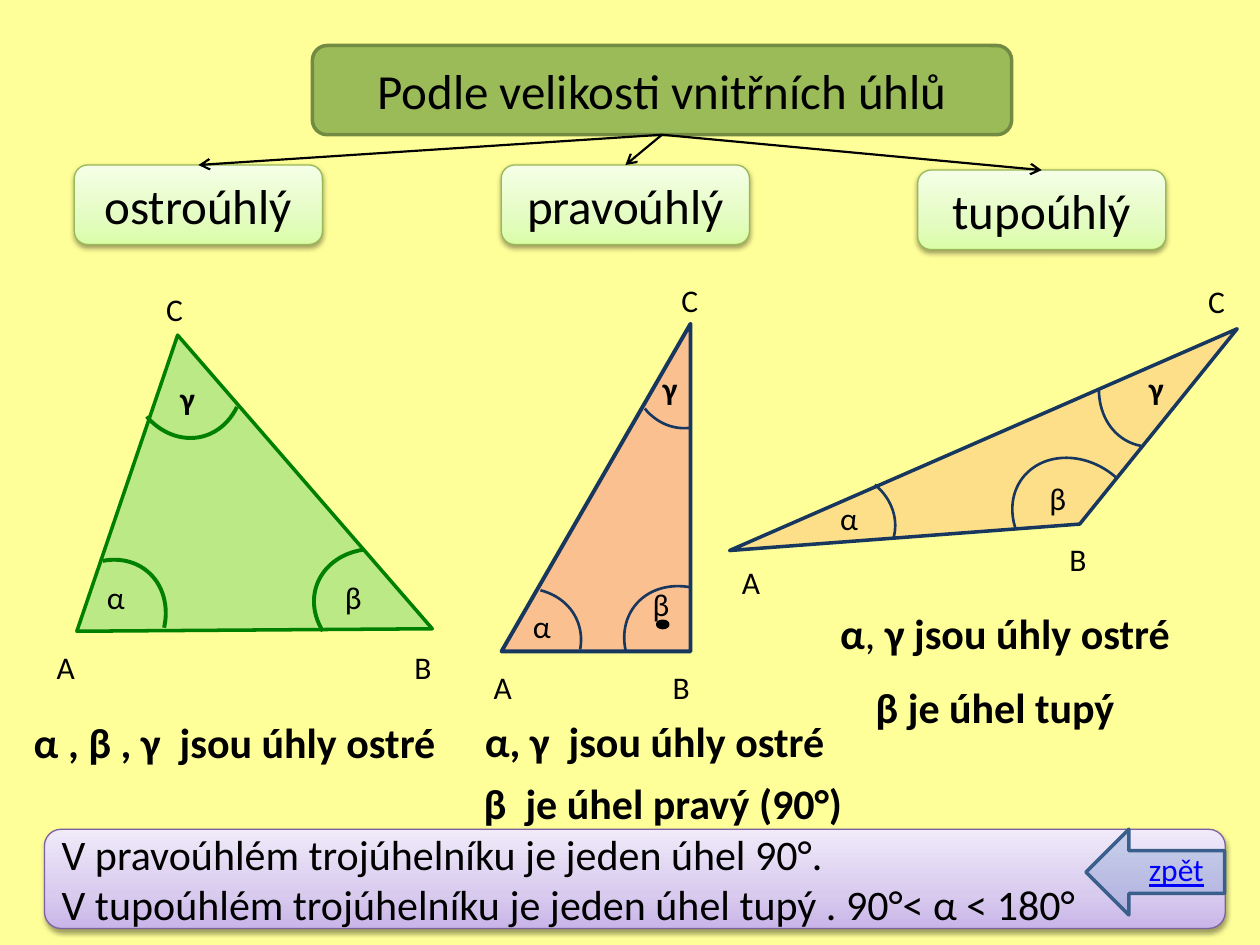
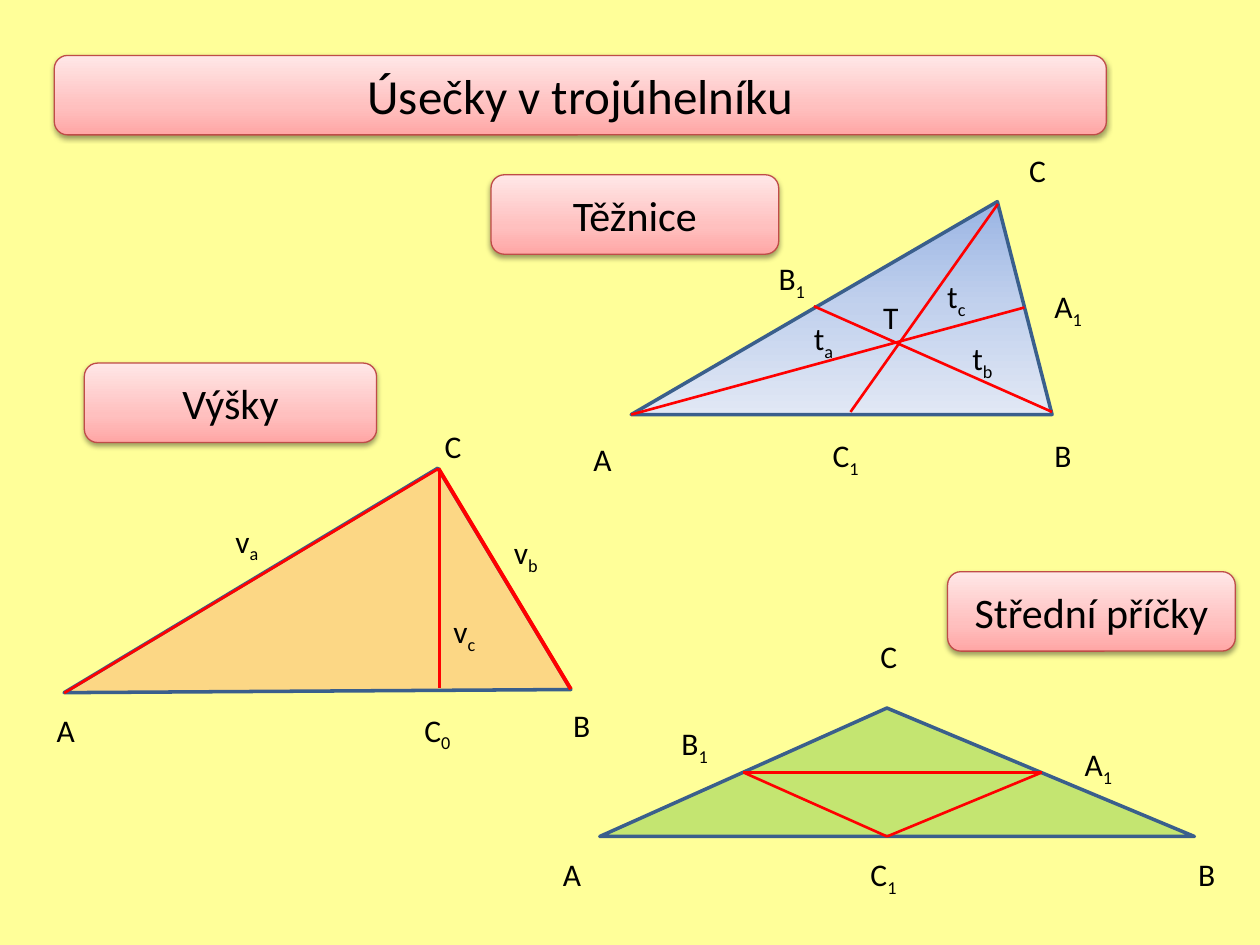
import pptx
import pptx.oxml
import pptx.oxml.ns
import pptx.util
import pptx.dml.color
import pptx.enum.shapes
import pptx.enum.text

Pt = pptx.util.Pt
RGBColor = pptx.dml.color.RGBColor
SHAPE = pptx.enum.shapes.MSO_SHAPE
STRAIGHT = pptx.enum.shapes.MSO_CONNECTOR.STRAIGHT
CENTER = pptx.enum.text.PP_ALIGN.CENTER
LEFT = pptx.enum.text.PP_ALIGN.LEFT
DRAWING = pptx.oxml.ns.nsdecls("a")

PAPER = RGBColor(0xFF, 0xFF, 0x99)
BLACK = RGBColor(0, 0, 0)
RED = RGBColor(0xFF, 0, 0)
LINK_BLUE = RGBColor(0, 0, 0xFF)
OLIVE = RGBColor(0x9B, 0xBB, 0x59)
OLIVE_EDGE = RGBColor(0x73, 0x8A, 0x42)
LIME_EDGE = RGBColor(0x98, 0xB9, 0x55)
VIOLET_EDGE = RGBColor(0x7D, 0x60, 0xA0)
ROSE_EDGE = RGBColor(0xBF, 0x4C, 0x48)
LEAF = RGBColor(0, 0xB0, 0x50)
DARK_GREEN = RGBColor(0, 0x80, 0)
CORAL = RGBColor(0xF9, 0x8C, 0x61)
PEACH = RGBColor(0xFA, 0xC0, 0x90)
NAVY = RGBColor(0x17, 0x37, 0x5E)
BLUE = RGBColor(0x4F, 0x81, 0xBD)
STEEL = RGBColor(0x3A, 0x5F, 0x8C)
GRASS = RGBColor(0x92, 0xD0, 0x50)

# Gradients: angle in degrees, then (position in percent, colour)
LIME = (270, [(0, RGBColor(0xDA, 0xFD, 0xA7)), (35, RGBColor(0xE4, 0xFC, 0xC2)),
              (100, RGBColor(0xF5, 0xFF, 0xE7))])
VIOLET = (270, [(0, RGBColor(0xC9, 0xB5, 0xE8)), (35, RGBColor(0xD8, 0xCB, 0xEE)),
                (100, RGBColor(0xF0, 0xEA, 0xF9))])
ROSE = (270, [(0, RGBColor(0xFF, 0xA6, 0xA5)), (35, RGBColor(0xFF, 0xC0, 0xBF)),
              (100, RGBColor(0xFF, 0xE7, 0xE7))])
SKY = (90, [(0, RGBColor(0x9A, 0xB5, 0xE4)), (50, RGBColor(0xC2, 0xD1, 0xED)),
            (100, RGBColor(0xE1, 0xE8, 0xF5))])


def paint(shape, fill, edge, width, opacity=100, shadow=False):
    """Fill with a colour, a gradient or nothing, and set outline and shadow."""
    properties = shape._element.spPr
    shape.fill.background()
    if isinstance(fill, RGBColor):
        shape.fill.solid()
        shape.fill.fore_color.rgb = fill
        if opacity < 100:
            color = properties.find(".//" + pptx.oxml.ns.qn("a:srgbClr"))
            color.append(pptx.oxml.parse_xml(f'<a:alpha {DRAWING} val="{opacity * 1000}"/>'))
    elif fill:
        angle, stops = fill
        marks = "".join(f'<a:gs pos="{at * 1000}"><a:srgbClr val="{color}"/></a:gs>'
                        for at, color in stops)
        properties.replace(
            properties.find(pptx.oxml.ns.qn("a:noFill")),
            pptx.oxml.parse_xml(f'<a:gradFill {DRAWING} rotWithShape="1"><a:gsLst>{marks}</a:gsLst>'
                                f'<a:lin ang="{angle * 60000}" scaled="0"/></a:gradFill>'))
    shape.line.color.rgb = edge
    shape.line.width = Pt(width)
    shape.shadow.inherit = False
    if shadow:
        properties.find(pptx.oxml.ns.qn("a:effectLst")).append(pptx.oxml.parse_xml(
            f'<a:outerShdw {DRAWING} blurRad="40000" dist="20000" dir="5400000" rotWithShape="0">'
            '<a:srgbClr val="000000"><a:alpha val="38000"/></a:srgbClr></a:outerShdw>'))


def write(shape, text, size, bold=False, align=LEFT, color=BLACK):
    """Write lines of text; what follows an underscore is a subscript."""
    frame = shape.text_frame
    frame.word_wrap = True
    for number, line in enumerate(text.split("\n")):
        para = frame.add_paragraph() if number else frame.paragraphs[0]
        para.alignment = align
        para.font.name = "Calibri"
        para.font.size = Pt(size)
        para.font.bold = bold
        para.font.color.rgb = color
        base, _, subscript = line.partition("_")
        para.add_run().text = base
        if subscript:
            span = para.add_run()
            span.text = subscript
            span._r.get_or_add_rPr().set("baseline", "-25000")


deck = pptx.Presentation()
deck.slide_width, deck.slide_height = Pt(720), Pt(540)
angles_page, segments_page = pages = [deck.slides.add_slide(deck.slide_layouts[6]) for _ in range(2)]
for page in pages:
    page.background.fill.solid()
    page.background.fill.fore_color.rgb = PAPER

# Preset triangles: page, kind, frame, rotation, apex, fill, opacity, edge, width
for page, kind, frame, rotation, apex, fill, opacity, edge, width in [
    (angles_page, SHAPE.RIGHT_TRIANGLE, (247, 224.6, 187.2, 108), 270, None, PEACH, 100, NAVY, 2.25),
    (segments_page, SHAPE.ISOSCELES_TRIANGLE, (360.7, 115.2, 240.5, 121.7), 0, 0.87, SKY, 100, STEEL, 2),
    (segments_page, SHAPE.RIGHT_TRIANGLE, (56.9, 321.1, 249.1, 147.6), 149, None, CORAL, 34, STEEL, 2),
    (segments_page, SHAPE.ISOSCELES_TRIANGLE, (342.7, 404.6, 339.8, 73.4), 0, 0.483, GRASS, 54, STEEL, 2),
]:
    triangle = page.shapes.add_shape(kind, *map(Pt, frame))
    triangle.rotation = rotation
    if apex:
        triangle.adjustments[0] = apex
    paint(triangle, fill, edge, width, opacity)

# Acute and obtuse triangles drawn by their corners
for corners, fill, edge in [
    ([(101.5, 191.5), (43.9, 360.7), (247, 359.3)], LEAF, DARK_GREEN),
    ([(617, 299.5), (707, 187.9), (416.9, 314.6)], CORAL, NAVY),
]:
    points = [(Pt(x), Pt(y)) for x, y in corners]
    builder = angles_page.shapes.build_freeform(*points[0])
    builder.add_line_segments(points[1:], close=True)
    paint(builder.convert_to_shape(), fill, edge, 2, 27)

# Angle arcs: left, top, rotation, start, end, edge, width
for left, top, rotation, start, end, edge, width in [
    (26.6, 317.5, 39.6, 137.64, 194.54, DARK_GREEN, 2.25),
    (73.4, 172.8, 166.1, 137.64, 194.54, DARK_GREEN, 2.25),
    (185, 308.2, 288.4, 137.64, 194.54, DARK_GREEN, 2.25),
    (261.4, 331.2, 64.7, 137.64, 178.17, NAVY, 1.5),
    (360.7, 331.2, 307.6, 137.64, 194.54, NAVY, 1.5),
    (360, 167, 188.5, 155.98, 181.76, NAVY, 1.5),
    (439.9, 261.4, 90, 137.64, 167.85, NAVY, 1.5),
    (582.5, 257.8, 307.1, 134.98, 3.28, NAVY, 1.5),
    (629.3, 178.6, 206.5, 155.03, 194.54, NAVY, 1.5),
]:
    arc = angles_page.shapes.add_shape(SHAPE.ARC, Pt(left), Pt(top), Pt(65.5), Pt(77.8))
    arc.rotation = rotation
    arc.adjustments[0], arc.adjustments[1] = start, end
    paint(arc, None, edge, width)

# Rounded cards; those of the first page are kept for the arrows
cards = []
for page, text, frame, size, align, fill, edge in [
    (angles_page, "Podle velikosti vnitřních úhlů", (178.5, 26, 399.6, 51), 28, CENTER, OLIVE, OLIVE_EDGE),
    (angles_page, "ostroúhlý", (42.5, 94.3, 141.8, 45.4), 28, CENTER, LIME, LIME_EDGE),
    (angles_page, "pravoúhlý", (286.5, 94.3, 141.8, 45.4), 28, CENTER, LIME, LIME_EDGE),
    (angles_page, "tupoúhlý", (524.4, 97.2, 141.8, 45.4), 28, CENTER, LIME, LIME_EDGE),
    (angles_page, "V pravoúhlém trojúhelníku je jeden úhel 90°.\n"
     "V tupoúhlém trojúhelníku je jeden úhel tupý . 90°< α < 180°",
     (25.4, 473.9, 674.8, 56.7), 24, LEFT, VIOLET, VIOLET_EDGE),
    (segments_page, "Úsečky v trojúhelníku", (31, 31.7, 601.2, 45.4), 28, CENTER, ROSE, ROSE_EDGE),
    (segments_page, "Těžnice", (280.6, 99.9, 164.4, 45.4), 24, CENTER, ROSE, ROSE_EDGE),
    (segments_page, "Výšky", (48.2, 207.5, 167, 45.4), 24, CENTER, ROSE, ROSE_EDGE),
    (segments_page, "Střední příčky", (541.5, 326.7, 164.4, 45.4), 24, CENTER, ROSE, ROSE_EDGE),
]:
    card = page.shapes.add_shape(SHAPE.ROUNDED_RECTANGLE, *map(Pt, frame))
    flat = fill is OLIVE
    paint(card, fill, edge, 2 if flat else 0.75, shadow=not flat)
    write(card, text, size, align=align)
    cards.append(card)

# Right-angle dot and back arrow
dot = angles_page.shapes.add_shape(SHAPE.OVAL, Pt(375.8), Pt(355), Pt(5.8), Pt(3.6))
paint(dot, BLACK, BLACK, 2)
back = angles_page.shapes.add_shape(SHAPE.LEFT_ARROW, Pt(620.6), Pt(473.8), Pt(79.2), Pt(49))
paint(back, BLUE, STEEL, 2, 24)
back_label = angles_page.shapes.add_textbox(Pt(649.4), Pt(482.4), Pt(48), Pt(29))
write(back_label, "zpět", 18, color=LINK_BLUE)
back_label.text_frame.paragraphs[0].runs[0].font.underline = True

# Arrows from the title to the three kinds
connectors = []
for card in cards[1:4]:
    arrow = angles_page.shapes.add_connector(STRAIGHT, 0, 0, 0, 0)
    arrow.begin_connect(cards[0], 2)
    arrow.end_connect(card, 0)
    connectors.append((arrow, BLACK, 1.25))

# Medians, midlines and altitudes
for start, end, width in [
    ((465.1, 175), (601.2, 235.4), 1.5),
    ((585.4, 175.7), (360.7, 236.9), 1.5),
    ((570.2, 116.6), (486, 235.4), 1.5),
    ((424.8, 441.4), (595.4, 441.4), 1.5),
    ((424.8, 441.4), (506.9, 478), 1.5),
    ((506.9, 478), (595.4, 441.4), 1.5),
    ((326.2, 393.8), (250.6, 267.8), 2.25),
    ((250.6, 267.8), (36.7, 396), 1.5),
    ((251.3, 268.6), (251.3, 393.1), 1.5),
]:
    segment = segments_page.shapes.add_connector(STRAIGHT, *map(Pt, start + end))
    connectors.append((segment, RED, width))

for connector, color, width in connectors:
    connector.line.color.rgb = color
    connector.line.width = Pt(width)
    if color is BLACK:
        connector.line._get_or_add_ln().append(
            pptx.oxml.parse_xml(f'<a:tailEnd {DRAWING} type="arrow"/>'))
    connector._element.spPr.append(pptx.oxml.parse_xml(f"<a:effectLst {DRAWING}/>"))

# Corner, angle and segment labels, each with its places
for page, places in [
    (angles_page, {
        "A": [(25.2, 366.5), (275, 378), (416.9, 318.2)],
        "B": [(229.7, 366.5), (377.3, 378), (604, 305.3)],
        "C": [(87.8, 162), (382.3, 157), (683.3, 157.7)],
        "α": [(54, 326.9), (297.4, 343.4), (473, 281.5)],
        "β": [(190, 326.9), (365.8, 330.5), (592.6, 270)],
        "γ": [(95.8, 213), (371.5, 207.4), (649.4, 207.4)],
    }),
    (segments_page, {
        "A": [(332, 247.7), (314.6, 485.3), (25.2, 402.5)],
        "B": [(595.4, 245.5), (677.5, 485.3), (320.4, 399.6)],
        "C": [(581, 82.8), (496, 360.7), (247, 240.5)],
        "T": [(497.5, 167)],
        "A_1": [(595.4, 160.6), (612.7, 422)],
        "B_1": [(437.8, 144.7), (382.3, 410.4)],
        "C_1": [(468.7, 245.5), (490.3, 485.3)],
        "C_0": [(235.4, 402.5)],
        "t_a": [(458, 178.6)],
        "t_b": [(548.6, 190)],
        "t_c": [(534.2, 154.8)],
        "v_a": [(127.4, 294.5)],
        "v_b": [(286.6, 301)],
        "v_c": [(252, 346.3)],
    }),
]:
    for text, spots in places.items():
        for left, top in spots:
            box = page.shapes.add_textbox(Pt(left), Pt(top), Pt(34 if "_" in text else 26), Pt(29))
            write(box, text, 18, bold=text == "γ")

# Statements under the triangles
for text, left, top, width in [
    ("α , β , γ  jsou úhly ostré", 12.2, 406, 256),
    ("α, γ  jsou úhly ostré", 270, 405.4, 216),
    ("β  je úhel pravý (90°)", 269.3, 440.6, 228),
    ("β je úhel tupý", 493.2, 386, 160),
]:
    box = angles_page.shapes.add_textbox(Pt(left), Pt(top), Pt(width), Pt(36))
    write(box, text, 24, bold=True)

# The obtuse statement has a comma in regular weight
box = angles_page.shapes.add_textbox(Pt(473), Pt(343.4), Pt(212), Pt(36))
write(box, "α", 24, bold=True)
para = box.text_frame.paragraphs[0]
for text, bold in [(", ", False), ("γ jsou úhly ostré", True)]:
    span = para.add_run()
    span.text = text
    span.font.bold = bold

deck.save("out.pptx")
